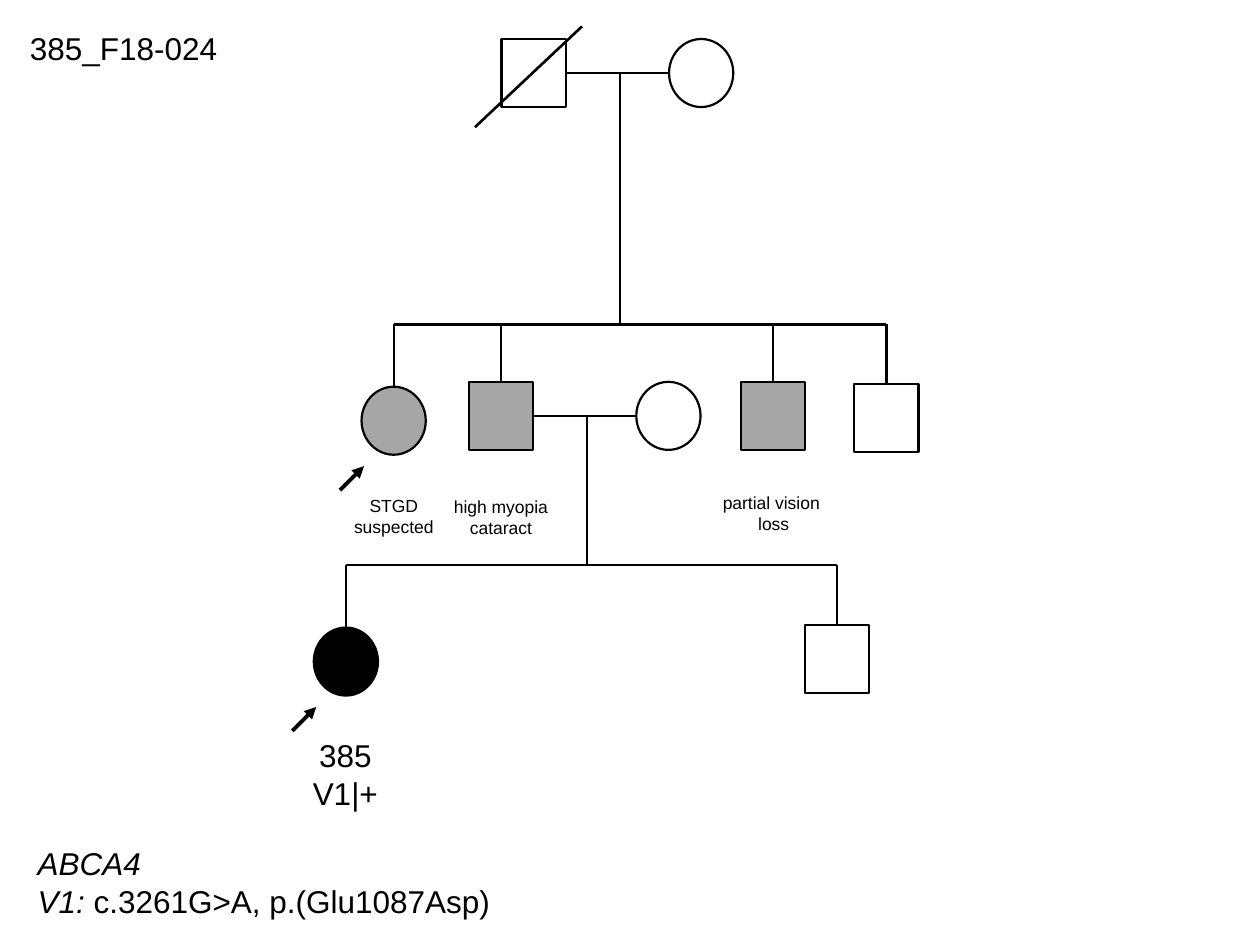
from dataclasses import dataclass
from typing import Optional

from lxml import etree
from pptx import Presentation
from pptx import util as u
from pptx.dml import color
from pptx.enum import shapes, text
from pptx.oxml import ns

BLACK, WHITE, GREY = "000000", "FFFFFF", "A6A6A6"
MALE, FEMALE = shapes.MSO_SHAPE.RECTANGLE, shapes.MSO_SHAPE.OVAL
SYMBOL_W, SYMBOL_H = 36.7, 38.9
TOP, RIGHT = 0, 3
THIN, MARRIAGE, POINTER = 1.25, 1.5, 2.25


@dataclass
class Person:
    sex: int
    left: float
    top: float
    fill: Optional[str] = None

    @property
    def center_x(self) -> float:
        return self.left + SYMBOL_W / 2

    @property
    def center_y(self) -> float:
        return self.top + SYMBOL_H / 2


@dataclass
class Label:
    left: float
    top: float
    width: float
    height: float
    lines: list  # each line is a list of (wording, italic) runs
    size: float = 18
    align: int = text.PP_ALIGN.LEFT


def rgb(value: str) -> color.RGBColor:
    return color.RGBColor.from_string(value)


def draw_person(slide, person: Person):
    symbol = slide.shapes.add_shape(person.sex, u.Pt(person.left), u.Pt(person.top),
                                    u.Pt(SYMBOL_W), u.Pt(SYMBOL_H))
    symbol.shadow.inherit = False
    if person.fill:
        symbol.fill.solid()
        symbol.fill.fore_color.rgb = rgb(person.fill)
    else:
        symbol.fill.background()
    symbol.line.color.rgb = rgb(BLACK)
    symbol.line.width = u.Pt(THIN)
    return symbol


def draw_line(slide, x1: float, y1: float, x2: float, y2: float,
              weight: float = THIN, arrow: bool = False):
    line = slide.shapes.add_connector(shapes.MSO_CONNECTOR.STRAIGHT,
                                      u.Pt(x1), u.Pt(y1), u.Pt(x2), u.Pt(y2))
    line.line.color.rgb = rgb(BLACK)
    line.line.width = u.Pt(weight)
    properties = line._element.spPr
    if arrow:
        etree.SubElement(properties.find(ns.qn("a:ln")), ns.qn("a:tailEnd"), type="triangle")
    etree.SubElement(properties, ns.qn("a:effectLst"))
    return line


def draw_family(slide, husband: Person, wife: Person, children: list[Person],
                symbols: dict, descent_x: float, sibship_y: float) -> None:
    """Marriage line, line of descent, sibship bar and a drop to each child."""
    marriage_y = husband.center_y
    marriage = draw_line(slide, wife.left, marriage_y, husband.left + SYMBOL_W, marriage_y,
                         MARRIAGE)
    marriage.end_connect(symbols[id(husband)], RIGHT)
    draw_line(slide, descent_x, marriage_y, descent_x, sibship_y)
    draw_line(slide, children[0].center_x, sibship_y, children[-1].center_x, sibship_y)
    for child in children:
        drop = draw_line(slide, child.center_x, sibship_y, child.center_x, child.top)
        drop.end_connect(symbols[id(child)], TOP)


def draw_label(slide, label: Label) -> None:
    box = slide.shapes.add_textbox(u.Pt(label.left), u.Pt(label.top),
                                   u.Pt(label.width), u.Pt(label.height))
    frame = box.text_frame
    frame.word_wrap = False
    frame.auto_size = text.MSO_AUTO_SIZE.SHAPE_TO_FIT_TEXT
    for number, runs in enumerate(label.lines):
        paragraph = frame.add_paragraph() if number else frame.paragraphs[0]
        paragraph.alignment = label.align
        for wording, italic in runs:
            run = paragraph.add_run()
            run.text = wording
            run_format = {"name": "Arial", "size": u.Pt(label.size), "italic": italic}
            for attribute, value in run_format.items():
                setattr(run.font, attribute, value)
            run.font.color.rgb = rgb(BLACK)


def plain(*lines: str) -> list:
    return [[(line, False)] for line in lines]


# Family members, by generation
grandfather = Person(MALE, 286.6, 22.3)
grandmother = Person(FEMALE, 382.3, 22.3)
aunt = Person(FEMALE, 206.6, 221, GREY)
father = Person(MALE, 267.8, 218.2, GREY)
mother = Person(FEMALE, 363.6, 218.2)
older_uncle = Person(MALE, 423.4, 218.2, GREY)
younger_uncle = Person(MALE, 488.2, 219.6, WHITE)
proband = Person(FEMALE, 179.3, 358.6, BLACK)
brother = Person(MALE, 460.1, 357.1, WHITE)
PEOPLE = [grandfather, grandmother, aunt, father, mother, older_uncle, younger_uncle,
          proband, brother]

CENTER = text.PP_ALIGN.CENTER
LABELS = [
    Label(10, 13, 122.4, 29, plain("385_F18-024")),
    Label(194.4, 279.4, 61.2, 31.5, plain("STGD", "suspected"), 10, CENTER),
    Label(252, 279.8, 68.4, 31.5, plain("high myopia", "cataract"), 10, CENTER),
    Label(405.4, 277.6, 73.4, 31.5, plain("partial vision ", "loss"), 10, CENTER),
    Label(171.4, 416.9, 51.8, 50.9, plain("385", "V1|+"), 18, CENTER),
    Label(14.4, 479, 275.8, 50.9,
          [[("ABCA4", True)], [("V1: ", True), ("c.3261G>A, p.(Glu1087Asp)", False)]]),
]


def main() -> None:
    deck = Presentation()
    deck.slide_width, deck.slide_height = u.Pt(720), u.Pt(540)
    slide = deck.slides.add_slide(deck.slide_layouts[6])

    # Pedigree symbols and family lines
    symbols = {id(person): draw_person(slide, person) for person in PEOPLE}
    draw_family(slide, grandfather, grandmother,
                [aunt, father, older_uncle, younger_uncle], symbols, 354.2, 185.4)
    draw_family(slide, father, mother, [proband, brother], symbols, 335.5, 323)

    # Deceased mark
    draw_line(slide, 271.4, 72.7, 332.6, 15.1, MARRIAGE)

    # Pointers to the examined members
    for member in (aunt, proband):
        tip_x, tip_y = member.left + 1.4, member.top + 45.4
        draw_line(slide, tip_x - 13.7, tip_y + 13.7, tip_x, tip_y, POINTER, arrow=True)

    # Title, findings and genotype
    for label in LABELS:
        draw_label(slide, label)

    deck.save("out.pptx")


if __name__ == "__main__":
    main()
